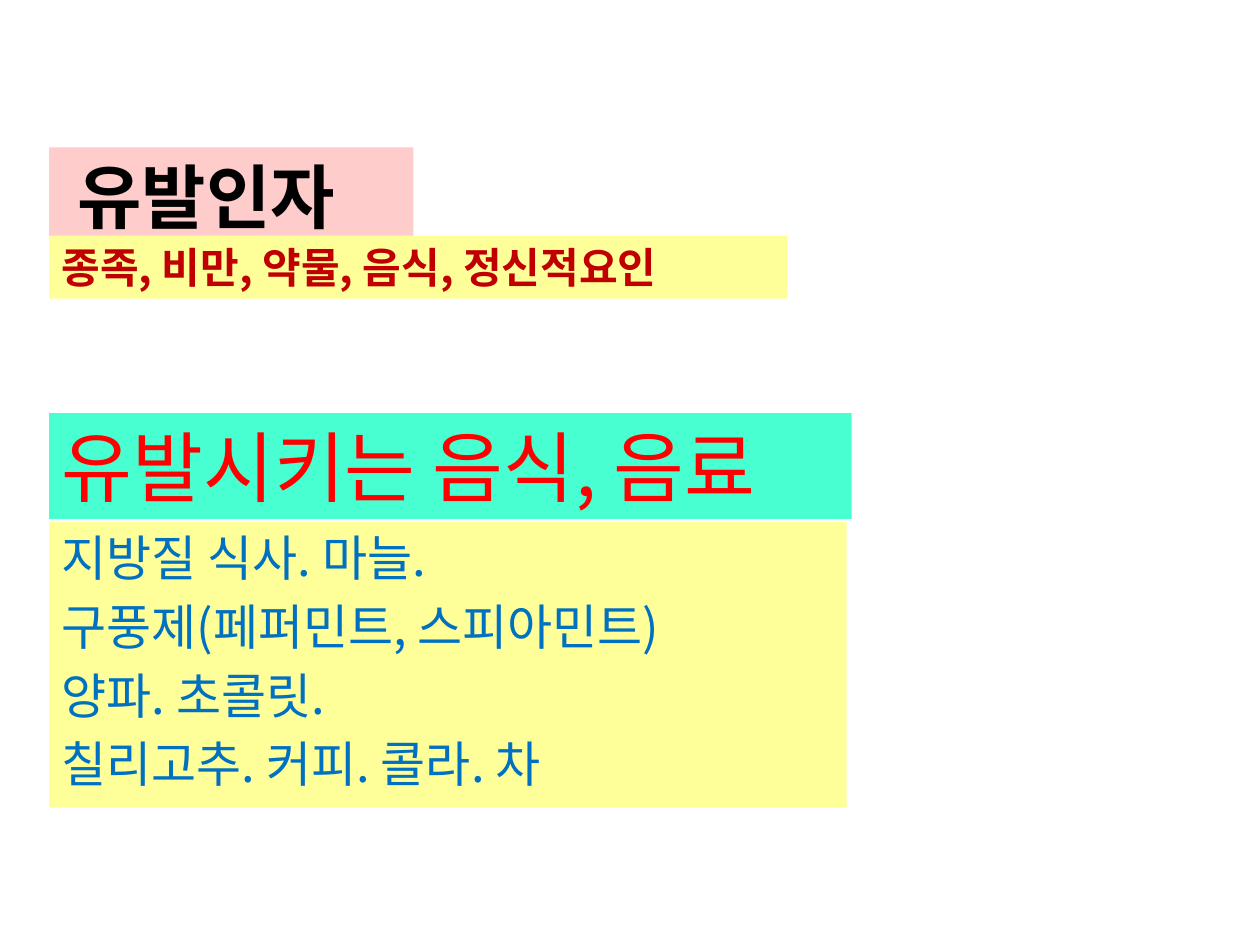
from dataclasses import dataclass

from lxml import etree
from pptx import Presentation
from pptx.dml.color import RGBColor
from pptx.enum.text import MSO_ANCHOR, MSO_AUTO_SIZE, PP_ALIGN
from pptx.oxml.ns import qn
from pptx.util import Inches, Pt

TOP, LEFT, FIXED = MSO_ANCHOR.TOP, PP_ALIGN.LEFT, MSO_AUTO_SIZE.NONE
FONT = "Noto Sans CJK KR"
BLACK = RGBColor(0x00, 0x00, 0x00)
DARK = RGBColor(0xC0, 0x00, 0x00)
RED = RGBColor(0xFF, 0x00, 0x00)
BLUE = RGBColor(0x00, 0x70, 0xC0)
PINK = RGBColor(0xFF, 0xCC, 0xCC)
MINT = RGBColor(0x47, 0xFF, 0xD1)
CREAM = RGBColor(0xFF, 0xFF, 0x99)
WIDTH, HEIGHT = Inches(10), Inches(7.5)
COL, ROW = WIDTH / 10, HEIGHT / 7.5
EDGE = 0.39
HANG = Inches(0.38)


@dataclass
class Panel:
    row: float
    cols: float
    rows: float
    fill: RGBColor
    size: int
    color: RGBColor
    lines: tuple[str, ...]
    bold: bool = False
    listed: bool = False


HEAD = Panel(1.17, 2.89, 0.77, PINK, 40, BLACK, (" 유발인자",), bold=True)
CAUSE = Panel(1.87, 5.86, 0.5, CREAM, 24, DARK,
              ("종족, 비만, 약물, 음식, 정신적요인",), bold=True)
FOOD = Panel(3.28, 6.37, 0.84, MINT, 44, RED, ("유발시키는 음식, 음료",))
ITEMS = Panel(4.14, 6.33, 2.27, CREAM, 28, BLUE,
              ("지방질 식사. 마늘.", "구풍제(페퍼민트, 스피아민트)",
               "양파. 초콜릿.", "칠리고추. 커피. 콜라. 차"), listed=True)


def write(para, text: str, panel: Panel) -> None:
    para.alignment = LEFT
    para.line_spacing = Pt(panel.size * 1.2)
    para.space_before = Pt(panel.size * 0.2 if panel.listed else 0)
    if panel.listed:
        props = para._p.get_or_add_pPr()
        props.set("marL", str(HANG))
        props.set("indent", str(-HANG))
        etree.SubElement(props, qn("a:buNone"))
    run = para.add_run()
    run.text = text
    font = run.font
    font.name, font.size, font.bold = FONT, Pt(panel.size), panel.bold
    font.color.rgb = panel.color
    asian = etree.SubElement(run._r.get_or_add_rPr(), qn("a:ea"))
    asian.set("typeface", FONT)


def draw(shape, panel: Panel) -> None:
    shape.left, shape.top = round(EDGE * COL), round(panel.row * ROW)
    shape.width, shape.height = round(panel.cols * COL), round(panel.rows * ROW)
    shape.fill.solid()
    shape.fill.fore_color.rgb = panel.fill
    frame = shape.text_frame
    frame.word_wrap, frame.auto_size = True, FIXED
    frame.vertical_anchor = TOP
    frame.margin_top = Inches(0.05)
    for i, text in enumerate(panel.lines):
        para = frame.add_paragraph() if i else frame.paragraphs[0]
        write(para, text, panel)


def main() -> None:
    deck = Presentation()
    deck.slide_width, deck.slide_height = WIDTH, HEIGHT
    slide = deck.slides.add_slide(deck.slide_layouts[1])
    draw(slide.shapes.title, HEAD)
    draw(slide.placeholders[1], ITEMS)
    for panel in (FOOD, CAUSE):
        draw(slide.shapes.add_textbox(0, 0, COL, ROW), panel)
    deck.save("out.pptx")


if __name__ == "__main__":
    main()
